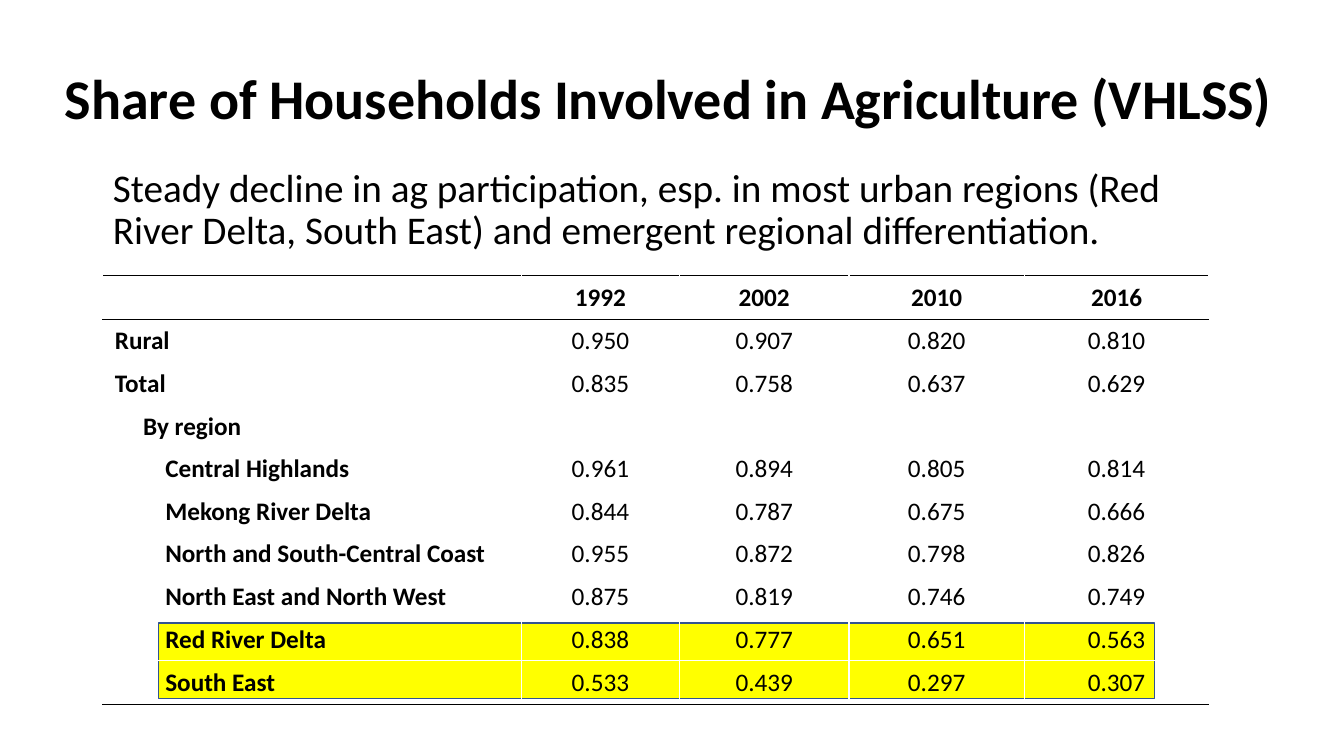
from lxml import etree
from pptx import Presentation
from pptx.dml.color import RGBColor
from pptx.enum.shapes import MSO_SHAPE
from pptx.enum.text import MSO_ANCHOR, MSO_AUTO_SIZE, PP_ALIGN
from pptx.oxml.ns import qn
from pptx.util import Inches, Pt

RECTANGLE = MSO_SHAPE.RECTANGLE
MIDDLE, TOP = MSO_ANCHOR.MIDDLE, MSO_ANCHOR.TOP
CENTER, LEFT = PP_ALIGN.CENTER, PP_ALIGN.LEFT
NO_AUTOFIT = MSO_AUTO_SIZE.NONE

FONT = "Calibri"
BLACK, WHITE, YELLOW, BLUE = "000000", "FFFFFF", "FFFF00", "325491"

TITLE = "Share of Households Involved in Agriculture (VHLSS)"
SUMMARY = ("Steady decline in ag participation, esp. in most urban regions "
           "(Red River Delta, South East) and emergent regional differentiation.")
YEARS = ["1992", "2002", "2010", "2016"]
# Indent level, label, share in each year
SHARES = [
    (0, "Rural", ["0.950", "0.907", "0.820", "0.810"]),
    (0, "Total", ["0.835", "0.758", "0.637", "0.629"]),
    (1, "By region", [""] * 4),
    (2, "Central Highlands", ["0.961", "0.894", "0.805", "0.814"]),
    (2, "Mekong River Delta", ["0.844", "0.787", "0.675", "0.666"]),
    (2, "North and South-Central Coast", ["0.955", "0.872", "0.798", "0.826"]),
    (2, "North East and North West", ["0.875", "0.819", "0.746", "0.749"]),
    (2, "Red River Delta", ["0.838", "0.777", "0.651", "0.563"]),
    (2, "South East", ["0.533", "0.439", "0.297", "0.307"]),
]
LABEL_INDENTS = [0.12, 0.4, 0.62]
CELL_MARGIN = 0.01

TABLE_LEFT, TABLE_TOP, TABLE_HEIGHT = 1.02, 2.73, 4.26
COLUMN_WIDTHS = [4.15, 1.57, 1.68, 1.74, 1.83]
EDGE_ROW_HEIGHT = 0.44


def color(hex_code):
    return RGBColor.from_string(hex_code)


def style_paragraph(paragraph, size, bold, align):
    paragraph.alignment = align
    font = paragraph.font
    font.name, font.size, font.bold = FONT, Pt(size), bold
    font.color.rgb = color(BLACK)


def fill_placeholder(placeholder, box, text, size, bold, align, anchor):
    placeholder.left, placeholder.top, placeholder.width, placeholder.height = map(Inches, box)
    frame = placeholder.text_frame
    frame.text = text
    frame.auto_size = NO_AUTOFIT
    frame.vertical_anchor = anchor
    paragraph = frame.paragraphs[0]
    style_paragraph(paragraph, size, bold, align)
    paragraph.line_spacing = 0.9
    return paragraph


def remove_bullet(paragraph):
    properties = paragraph._p.get_or_add_pPr()
    properties.set("marL", "0")
    properties.set("indent", "0")
    bullet_none = etree.Element(qn("a:buNone"))
    properties.find(qn("a:defRPr")).addprevious(bullet_none)


def set_borders(cell, top, bottom):
    properties = cell._tc.get_or_add_tcPr()
    for side, hex_code in (("L", WHITE), ("R", WHITE), ("T", top), ("B", bottom)):
        line = etree.SubElement(properties, qn(f"a:ln{side}"), w=str(Pt(1)))
        solid = etree.SubElement(line, qn("a:solidFill"))
        etree.SubElement(solid, qn("a:srgbClr"), val=hex_code)


def add_highlight(slide):
    highlight = slide.shapes.add_shape(
        RECTANGLE, Inches(1.57), Inches(6.18), Inches(9.88), Inches(0.75))
    highlight.shadow.inherit = False
    highlight.fill.solid()
    highlight.fill.fore_color.rgb = color(YELLOW)
    highlight.line.color.rgb = color(BLUE)
    highlight.line.width = Pt(1)


def add_share_table(slide):
    rows = [(0, "", YEARS)] + SHARES
    last = len(rows) - 1
    inner_height = (TABLE_HEIGHT - 2 * EDGE_ROW_HEIGHT) / (len(rows) - 2)
    table = slide.shapes.add_table(
        len(rows), len(COLUMN_WIDTHS), Inches(TABLE_LEFT), Inches(TABLE_TOP),
        Inches(sum(COLUMN_WIDTHS)), Inches(TABLE_HEIGHT)).table
    table.first_row = table.horz_banding = False
    for column, width in zip(table.columns, COLUMN_WIDTHS):
        column.width = Inches(width)

    for r, (level, label, values) in enumerate(rows):
        table.rows[r].height = Inches(EDGE_ROW_HEIGHT if r in (0, last) else inner_height)
        top_rule = BLACK if r in (0, 1) else WHITE
        bottom_rule = BLACK if r in (0, last) else WHITE
        for c, text in enumerate([label] + values):
            cell = table.cell(r, c)
            is_label = c == 0
            set_borders(cell, top_rule, bottom_rule)
            cell.fill.background()
            cell.vertical_anchor = MIDDLE
            cell.margin_left = Inches(LABEL_INDENTS[level] if is_label else CELL_MARGIN)
            cell.margin_top = cell.margin_right = Inches(CELL_MARGIN)
            cell.margin_bottom = 0
            cell.text = text
            style_paragraph(cell.text_frame.paragraphs[0], 18,
                            is_label or r == 0, LEFT if is_label else CENTER)


def main():
    presentation = Presentation()
    presentation.slide_width, presentation.slide_height = Inches(13.33), Inches(7.5)
    slide = presentation.slides.add_slide(presentation.slide_layouts[1])

    fill_placeholder(slide.shapes.title, (0.5, 0.28, 12.26, 1.45),
                     TITLE, 40, True, CENTER, MIDDLE)
    summary = fill_placeholder(slide.placeholders[1], (1.02, 1.62, 11.04, 6.25),
                               SUMMARY, 28, False, LEFT, TOP)
    summary.space_before = Pt(10)
    remove_bullet(summary)

    add_highlight(slide)
    add_share_table(slide)
    presentation.save("out.pptx")


if __name__ == "__main__":
    main()
